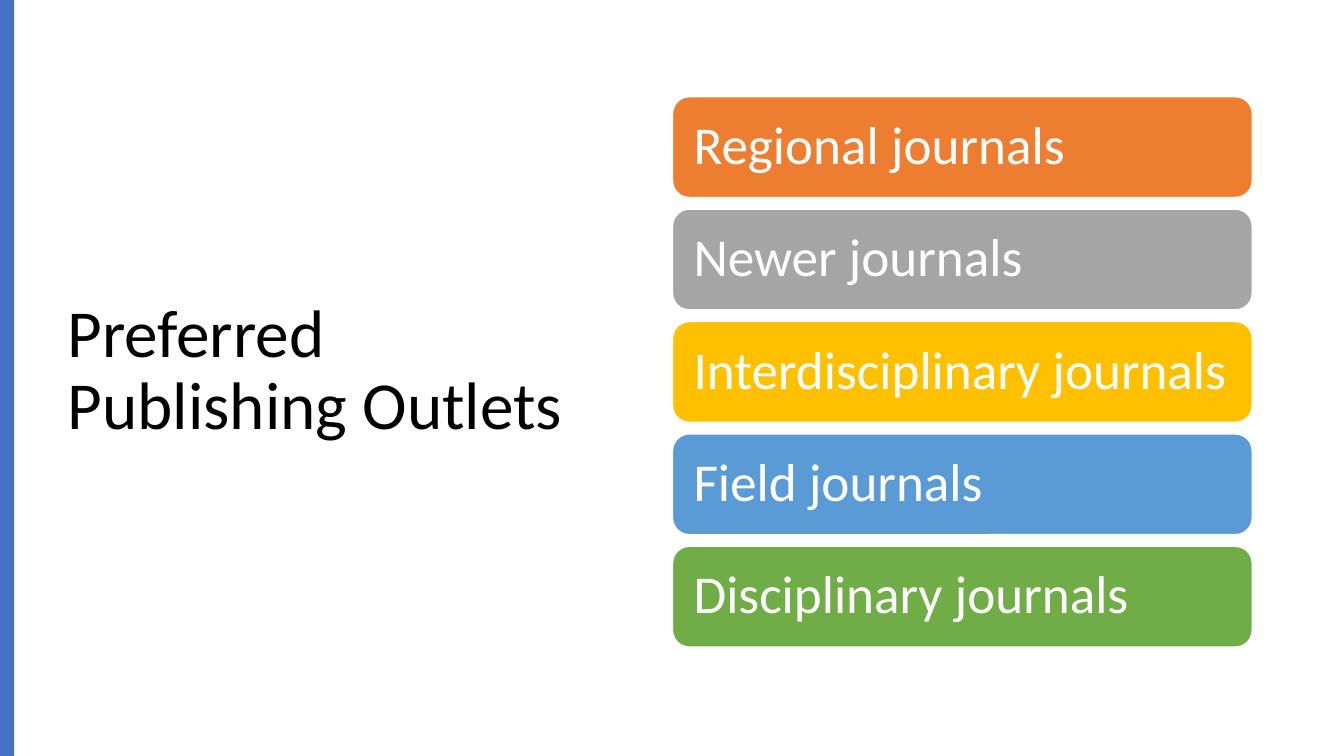
from pptx import Presentation
from pptx.dml.color import RGBColor
from pptx.enum.shapes import MSO_SHAPE as Shape
from pptx.enum.text import MSO_ANCHOR as Anchor, PP_ALIGN as Align
from pptx.util import Inches, Pt

COLORS = {
    "text": "000000",
    "white": "FFFFFF",
    "accent": "4472C4",
    "orange": "ED7D31",
    "gray": "A5A5A5",
    "gold": "FFC000",
    "blue": "5B9BD5",
    "green": "70AD47",
}
JOURNALS = [
    ("Regional journals", "orange"),
    ("Newer journals", "gray"),
    ("Interdisciplinary journals", "gold"),
    ("Field journals", "blue"),
    ("Disciplinary journals", "green"),
]
BAR_TOP, BAR_HEIGHT, LAST_BAR_TOP = 0.96, 1, 5.42
BAR_PITCH = (LAST_BAR_TOP - BAR_TOP) / (len(JOURNALS) - 1)


class OutletSlide:
    """Holds the slide and the style shared by its elements."""

    font = "Calibri"

    def __init__(self, deck):
        self.slide = deck.slides.add_slide(deck.slide_layouts[5])

    def color(self, name):
        return RGBColor.from_string(COLORS[name])

    def label(self, frame, text, size, color):
        frame.text = text
        frame.word_wrap = True
        frame.vertical_anchor = Anchor.MIDDLE
        paragraph = frame.paragraphs[0]
        paragraph.alignment = Align.LEFT
        paragraph.line_spacing = 0.9
        paragraph.font.name = self.font
        paragraph.font.size = Pt(size)
        paragraph.font.color.rgb = self.color(color)

    def title(self, text, left, top, width, height):
        heading = self.slide.shapes.title
        heading.left, heading.top = Inches(left), Inches(top)
        heading.width, heading.height = Inches(width), Inches(height)
        self.label(heading.text_frame, text, 48, "text")

    def block(self, kind, fill, left, top, width, height):
        block = self.slide.shapes.add_shape(
            kind, Inches(left), Inches(top), Inches(width), Inches(height))
        block.shadow.inherit = False
        block.fill.solid()
        block.fill.fore_color.rgb = self.color(fill)
        block.line.fill.background()
        return block

    def journal_bar(self, text, fill, top):
        bar = self.block(Shape.ROUNDED_RECTANGLE, fill, 6.67, top, 5.75, BAR_HEIGHT)
        bar.line.color.rgb = self.color("white")
        bar.line.width = Pt(1)
        frame = bar.text_frame
        frame.margin_left = frame.margin_right = Inches(0.16)
        frame.margin_top = frame.margin_bottom = Inches(0.16)
        self.label(frame, text, 38, "white")


def main():
    deck = Presentation()
    deck.slide_width, deck.slide_height = Inches(13.33), Inches(7.5)
    outlets = OutletSlide(deck)
    outlets.title("Preferred Publishing Outlets", 0.57, 0.68, 5.67, 6.02)
    outlets.block(Shape.RECTANGLE, "accent", 0, 0, 0.14, 7.5)
    for row, (journal, fill) in enumerate(JOURNALS):
        outlets.journal_bar(journal, fill, BAR_TOP + row * BAR_PITCH)
    deck.save("out.pptx")


if __name__ == "__main__":
    main()
